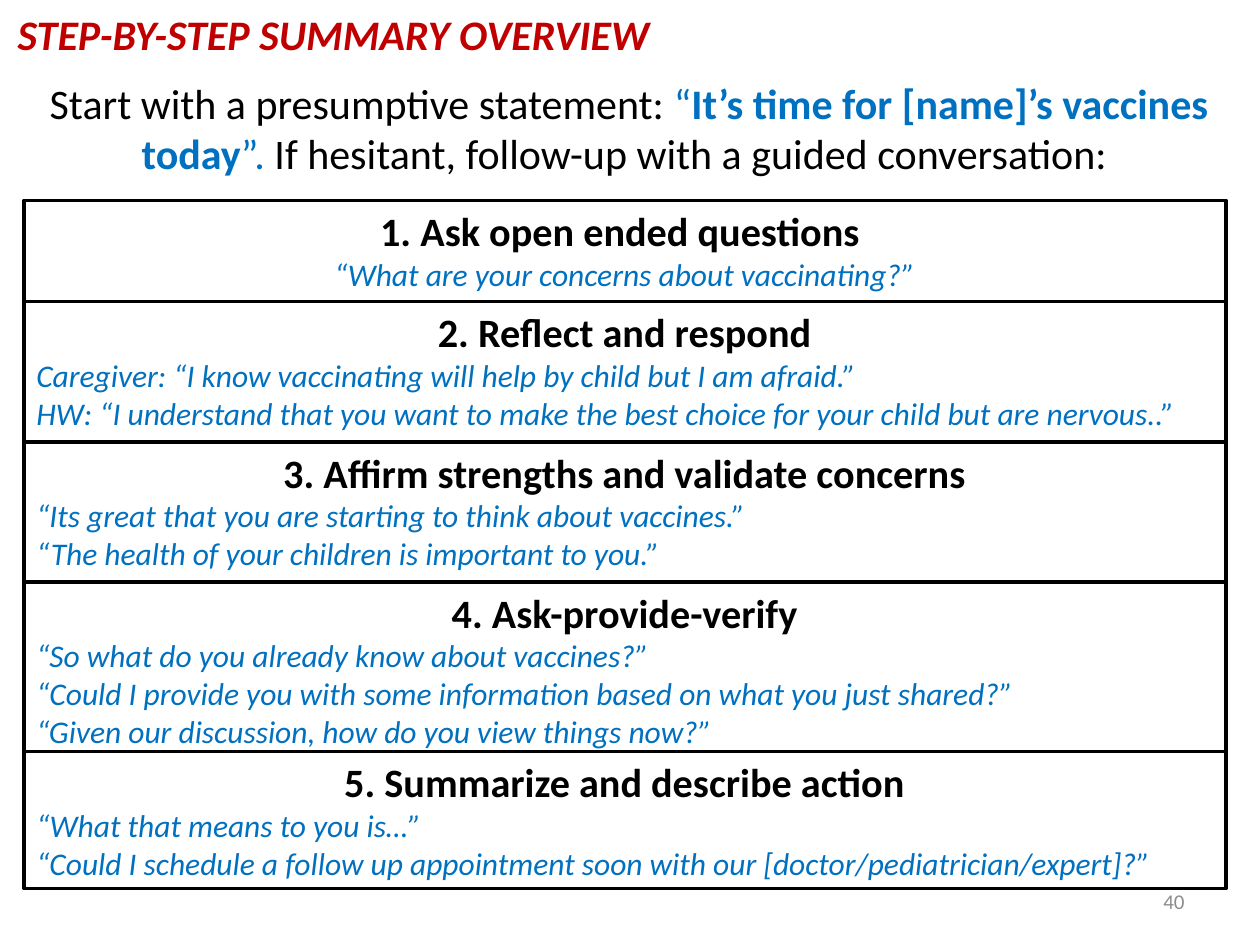
import pptx
import pptx.dml.color
import pptx.enum.shapes
import pptx.enum.text
import pptx.util

Pt = pptx.util.Pt
ALIGN = pptx.enum.text.PP_ALIGN
ANCHOR = pptx.enum.text.MSO_ANCHOR
BLACK, WHITE, BLUE, RED, GRAY = "000000", "FFFFFF", "0070C0", "C00000", "8C8C8C"

STEP_LEFT, STEP_WIDTH = 13.7, 686.9
# top, height, heading, quote alignment, quotes
STEPS = [
    (114.5, 58, "1. Ask open ended questions ", ALIGN.CENTER,
     ["“What are your concerns about vaccinating?”"]),
    (172.3, 80, "2. Reflect and respond", ALIGN.LEFT,
     ["Caregiver: “I know vaccinating will help by child but I am afraid.”",
      "HW: “I understand that you want to make the best choice for your child but are nervous..”"]),
    (252.5, 80, "3. Affirm strengths and validate concerns", ALIGN.LEFT,
     ["“Its great that you are starting to think about vaccines.”",
      "“The health of your children is important to you.”"]),
    (332.5, 101, "4. Ask-provide-verify", ALIGN.LEFT,
     ["“So what do you already know about vaccines?”",
      "“Could I provide you with some information based on what you just shared?”",
      "“Given our discussion, how do you view things now?”"]),
    (429.3, 78.5, "5. Summarize and describe action", ALIGN.LEFT,
     ["“What that means to you is…”",
      "“Could I schedule a follow up appointment soon with our [doctor/pediatrician/expert]?”"]),
]
OPENING = [
    ("Start with a presumptive statement: ", BLACK, False),
    ("“", BLUE, False),
    ("It’s time for [name]’s vaccines today", BLUE, True),
    ("”. ", BLUE, False),
    ("If hesitant, follow-up with a guided conversation: ", BLACK, False),
]


def rgb(color):
    return pptx.dml.color.RGBColor.from_string(color)


def style_paragraph(p, size, color, align=ALIGN.LEFT, bold=False, italic=False):
    p.alignment = align
    p.font.name = "Calibri"
    p.font.size = Pt(size)
    p.font.color.rgb = rgb(color)
    p.font.bold = bold
    p.font.italic = italic


def add_text_box(slide, left, top, width, height, anchor=ANCHOR.TOP):
    """Add an empty wrapping text box and return its first paragraph."""
    tf = slide.shapes.add_textbox(Pt(left), Pt(top), Pt(width), Pt(height)).text_frame
    tf.word_wrap = True
    tf.vertical_anchor = anchor
    return tf.paragraphs[0]


def add_title(slide):
    p = add_text_box(slide, 3, 1.5, 402.5, 36)
    p.add_run().text = "STEP-BY-STEP SUMMARY OVERVIEW"
    style_paragraph(p, 24, RED, bold=True, italic=True)


def add_opening(slide):
    p = add_text_box(slide, 1, 40.5, 717, 65.5)
    style_paragraph(p, 24, BLACK, ALIGN.CENTER)
    for text, color, bold in OPENING:
        r = p.add_run()
        r.text = text
        r.font.name = "Calibri"
        r.font.size = Pt(24)
        r.font.color.rgb = rgb(color)
        r.font.bold = bold


def add_step(slide, top, height, heading, quote_align, quotes):
    s = slide.shapes.add_shape(
        pptx.enum.shapes.MSO_SHAPE.RECTANGLE,
        Pt(STEP_LEFT), Pt(top), Pt(STEP_WIDTH), Pt(height))
    s.shadow.inherit = False
    s.fill.solid()
    s.fill.fore_color.rgb = rgb(WHITE)
    s.line.color.rgb = rgb(BLACK)
    s.line.width = Pt(2)
    tf = s.text_frame
    tf.word_wrap = True
    tf.vertical_anchor = ANCHOR.TOP
    p = tf.paragraphs[0]
    p.add_run().text = heading
    style_paragraph(p, 23, BLACK, ALIGN.CENTER, bold=True)
    for quote in quotes:
        p = tf.add_paragraph()
        p.add_run().text = quote
        style_paragraph(p, 18, BLUE, quote_align, italic=True)


def add_page_number(slide):
    p = add_text_box(slide, 516, 500.5, 168, 28.75, ANCHOR.MIDDLE)
    p.add_run().text = "40"
    style_paragraph(p, 12, GRAY, ALIGN.RIGHT)


def main():
    prs = pptx.Presentation()
    prs.slide_width, prs.slide_height = Pt(720), Pt(540)
    slide = prs.slides.add_slide(prs.slide_layouts[6])
    add_page_number(slide)
    add_opening(slide)
    for step in STEPS:
        add_step(slide, *step)
    add_title(slide)
    prs.save("out.pptx")


if __name__ == "__main__":
    main()
